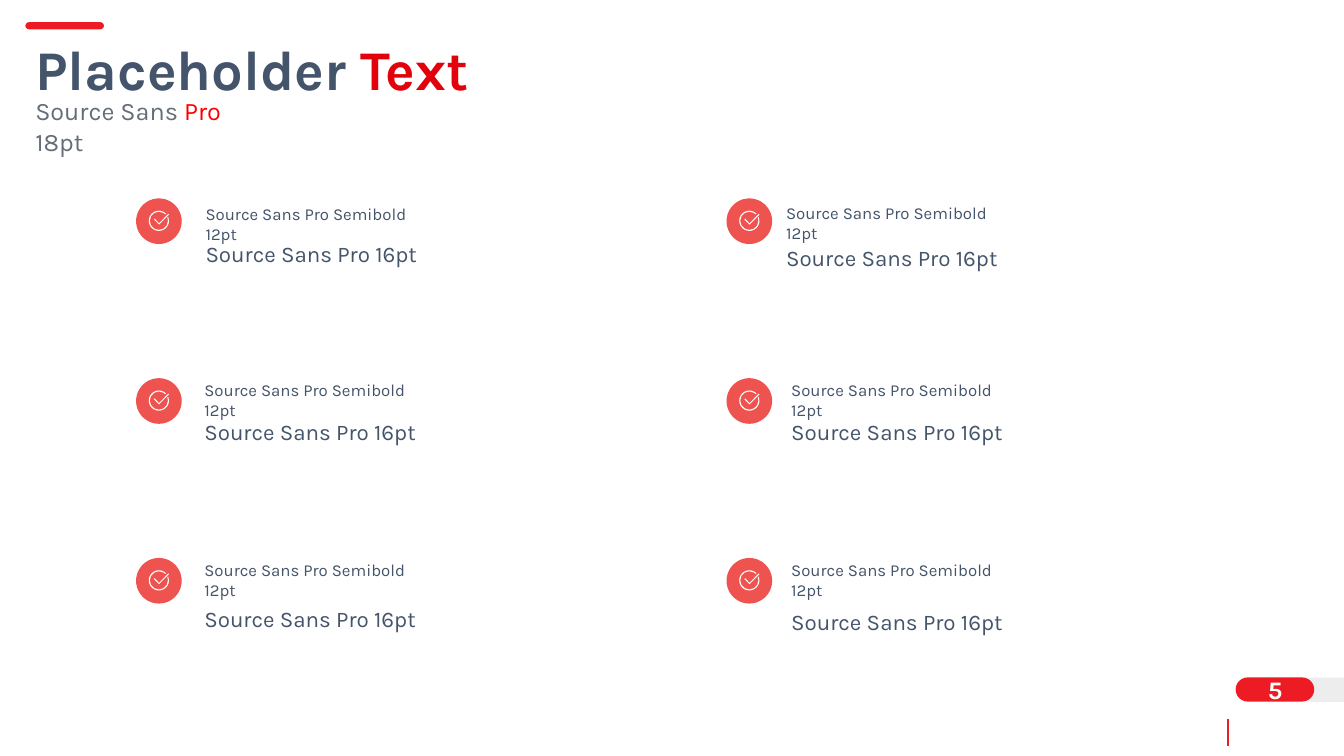
from lxml import etree
from pptx import Presentation
from pptx.dml.color import RGBColor
from pptx.enum import shapes, text
from pptx.oxml.ns import qn
from pptx.util import Cm, Pt

RED, SLATE, GREY, WHITE = "ED1C24", "44546A", "656D78", "FFFFFF"
KIND = shapes.MSO_SHAPE


def paint(shape, color):
    shape.shadow.inherit = False
    shape.fill.solid()
    shape.fill.fore_color.rgb = RGBColor.from_string(color)
    shape.line.fill.background()


def write(box, runs, size, bold=False, align=text.PP_ALIGN.LEFT, spacing=None):
    """Fill a box with one paragraph of (words, colour) runs."""
    frame = box.text_frame
    frame.word_wrap = True
    frame.auto_size = text.MSO_AUTO_SIZE.SHAPE_TO_FIT_TEXT
    frame.vertical_anchor = text.MSO_ANCHOR.TOP
    para = frame.paragraphs[0]
    para.alignment = align
    if spacing:
        para.line_spacing = spacing
    for words, color in runs:
        run = para.add_run()
        run.text = words
        run.font.name = "Karla"
        run.font.size = Pt(size)
        run.font.bold = bold
        run.font.color.rgb = RGBColor.from_string(color)


deck = Presentation()
deck.slide_width, deck.slide_height = Cm(33.87), Cm(19.05)
slide = deck.slides.add_slide(deck.slide_layouts[5])
parts = slide.shapes

# Title and subtitle
title = parts.title
title.left, title.top, title.width, title.height = Cm(0.64), Cm(0.74), Cm(20.98), Cm(1.96)
write(title, [("Placeholder ", SLATE), ("Text", "E2020C")], 40, bold=True)
sub = parts.add_textbox(Cm(0.64), Cm(2.29), Cm(6.2), Cm(1.02))
write(sub, [("Source Sans ", GREY), ("Pro", "FF0000"), (" 18pt", GREY)], 18)

# Accent bar and page number
tab = parts.add_shape(KIND.ROUND_2_SAME_RECTANGLE, Cm(33), Cm(16.82), Cm(0.61), Cm(1.12))
tab.rotation = 270
tab.adjustments[0] = 0.5
paint(tab, "A6A6A6")
tint = tab.fill._xPr.find(".//" + qn("a:srgbClr"))
etree.SubElement(tint, qn("a:alpha"), val="20000")

for x, y, w, h in [(31.14, 17.07, 1.98, 0.61), (0.64, 0.56, 1.98, 0.18)]:
    pill = parts.add_shape(KIND.ROUNDED_RECTANGLE, Cm(x), Cm(y), Cm(w), Cm(h))
    pill.adjustments[0] = 0.5
    paint(pill, RED)

page = parts.add_textbox(Cm(31.22), Cm(16.87), Cm(1.83), Cm(1.02))
write(page, [("5", WHITE)], 18, bold=True, align=text.PP_ALIGN.CENTER)

rule = parts.add_connector(shapes.MSO_CONNECTOR.STRAIGHT, Cm(30.94), Cm(18.13), Cm(30.94), Cm(18.8))
rule.line.color.rgb = RGBColor.from_string(RED)
rule.line.width = Pt(1.25)
etree.SubElement(rule._element.spPr, qn("a:effectLst"))

# Tick outline in hundredths of a centimetre
tick = [(0, 14), (2, 12), (13, 24), (36, 0), (38, 2), (13, 27)]

# Items: text left, label top, body top
items = [
    [(4.93, 5, 5.59), (4.9, 9.45, 10.08), (4.9, 13.97, 14.78)],
    [(19.56, 4.98, 5.69), (19.69, 9.45, 10.08), (19.69, 13.97, 14.86)],
]
for col, column in enumerate(items):
    for row, (left, head, body) in enumerate(column):
        x, y = 3.43 + col * 14.88, 5 + row * 4.53
        disc = parts.add_shape(KIND.OVAL, Cm(x), Cm(y), Cm(1.15), Cm(1.15))
        paint(disc, "EF5350")

        ring = parts.add_shape(KIND.BLOCK_ARC, Cm(x + 0.32), Cm(y + 0.31), Cm(0.51), Cm(0.51))
        # Angles count in 60000ths of a degree, adjustments in 100000ths
        ring.adjustments[0] = 338 * 0.6
        ring.adjustments[1] = 315 * 0.6
        ring.adjustments[2] = 0.05
        paint(ring, WHITE)

        pen = parts.build_freeform(*tick[0], scale=Cm(0.01))
        pen.add_line_segments(tick[1:])
        paint(pen.convert_to_shape(Cm(x + 0.45), Cm(y + 0.39)), WHITE)

        box = parts.add_textbox(Cm(left), Cm(body), Cm(10.69), Cm(1.17))
        write(box, [("Source Sans Pro 16pt", SLATE)], 16, spacing=1.5)
        box = parts.add_textbox(Cm(left), Cm(head), Cm(6.25), Cm(0.76))
        write(box, [("Source Sans Pro Semibold 12pt", SLATE)], 12)

deck.save("out.pptx")
